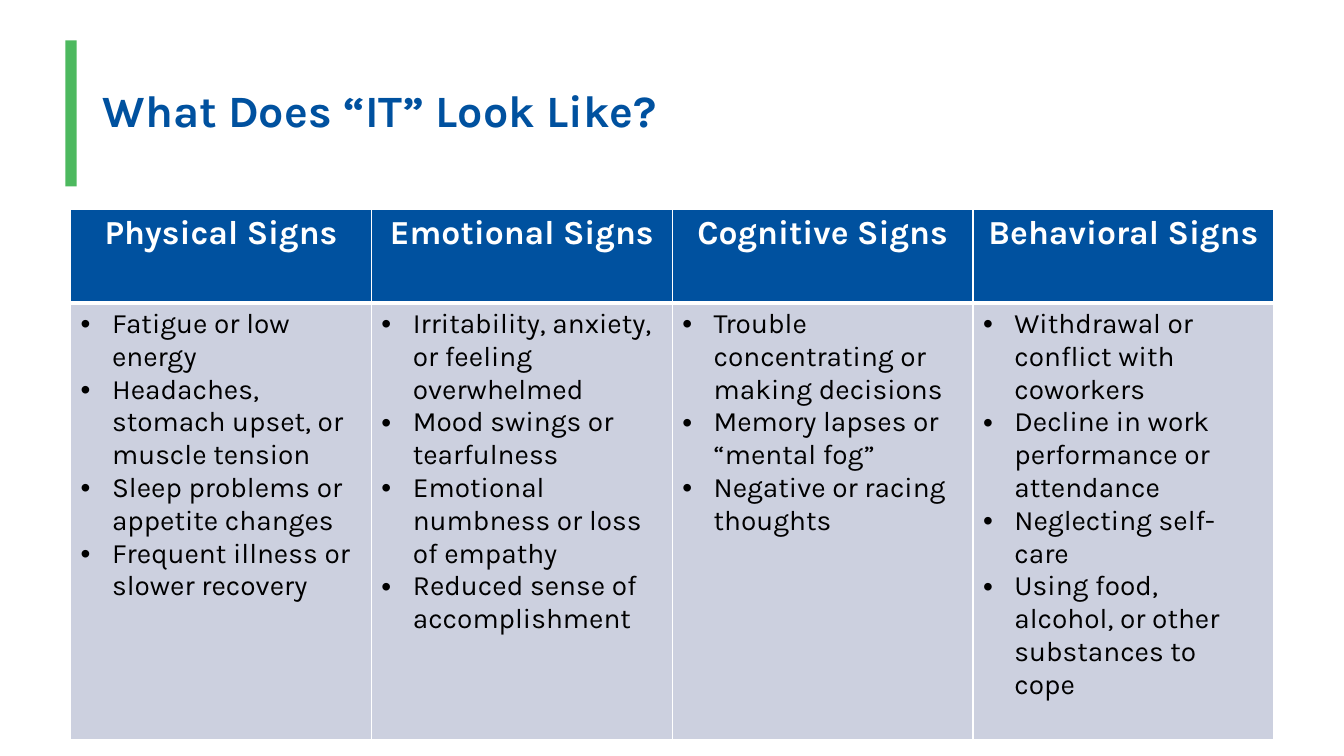
from dataclasses import dataclass

from lxml.etree import SubElement
from pptx import Presentation
from pptx.dml.color import RGBColor
from pptx.enum.shapes import MSO_SHAPE as Shape
from pptx.enum.text import MSO_ANCHOR as Anchor, PP_ALIGN as Align
from pptx.oxml.ns import qn
from pptx.util import Cm, Pt

BLUE = RGBColor(0x00, 0x51, 0x9F)
GREEN = RGBColor(0x4D, 0xB9, 0x5F)
PALE = RGBColor(0xCC, 0xD0, 0xDF)
BLACK = RGBColor(0, 0, 0)
WHITE = RGBColor(0xFF, 0xFF, 0xFF)
FONT = "Karla"
WIDE, HEAD, BODY = Cm(7.58), Cm(2.36), Cm(11)


@dataclass
class Group:
    title: str
    signs: list[str]


GROUPS = [
    Group("Physical Signs", [
        "Fatigue or low energy",
        "Headaches, stomach upset, or muscle tension",
        "Sleep problems or appetite changes",
        "Frequent illness or slower recovery",
    ]),
    Group("Emotional Signs", [
        "Irritability, anxiety, or feeling overwhelmed",
        "Mood swings or tearfulness",
        "Emotional numbness or loss of empathy",
        "Reduced sense of accomplishment",
    ]),
    Group("Cognitive Signs", [
        "Trouble concentrating or making decisions",
        "Memory lapses or “mental fog”",
        "Negative or racing thoughts",
    ]),
    Group("Behavioral Signs", [
        "Withdrawal or conflict with coworkers",
        "Decline in work performance or attendance",
        "Neglecting self-care",
        "Using food, alcohol, or other substances to cope",
    ]),
]


def write(frame, lines: list[str], *, size: float, color: RGBColor,
          bold: bool = False, align=Align.LEFT, space: float = 1,
          bullet: bool = False) -> None:
    for num, line in enumerate(lines):
        para = frame.add_paragraph() if num else frame.paragraphs[0]
        para.alignment = align
        para.line_spacing = space
        if bullet:
            props = para._p.get_or_add_pPr()
            props.set("marL", str(Cm(0.79)))
            props.set("indent", str(-Cm(0.79)))
            SubElement(props, qn("a:buFont")).set("typeface", "Arial")
            SubElement(props, qn("a:buChar")).set("char", "•")
        run = para.add_run()
        run.text = line
        font = run.font
        font.name, font.size, font.bold = FONT, Pt(size), bold
        font.color.rgb = color


def paint(cell, fill: RGBColor, base: float) -> None:
    props = cell._tc.get_or_add_tcPr()
    for side, width in {"L": 1, "R": 1, "T": 1, "B": base}.items():
        edge = SubElement(props, qn(f"a:ln{side}"), w=str(Pt(width)))
        solid = SubElement(edge, qn("a:solidFill"))
        SubElement(solid, qn("a:srgbClr"), val=str(WHITE))
    cell.fill.solid()
    cell.fill.fore_color.rgb = fill


def add_title(slide) -> None:
    bar = slide.shapes.add_shape(
        Shape.RECTANGLE, Cm(1.65), Cm(1.02), Cm(0.28), Cm(3.68))
    bar.shadow.inherit = False
    bar.fill.solid()
    bar.fill.fore_color.rgb = GREEN
    bar.line.fill.background()
    box = slide.shapes.add_textbox(Cm(2.34), Cm(1.02), Cm(29.21), Cm(3.68))
    frame = box.text_frame
    frame.word_wrap = True
    frame.vertical_anchor = Anchor.MIDDLE
    write(frame, ["What Does “IT” Look Like?"], size=32, color=BLUE,
          bold=True, space=0.9)


def add_signs(slide) -> None:
    count = len(GROUPS)
    table = slide.shapes.add_table(
        2, count, Cm(1.78), Cm(5.27), WIDE * count, HEAD + BODY).table
    table.rows[0].height, table.rows[1].height = HEAD, BODY
    for col, group in enumerate(GROUPS):
        table.columns[col].width = WIDE
        head, body = table.cell(0, col), table.cell(1, col)
        paint(head, BLUE, 3)
        paint(body, PALE, 1)
        write(head.text_frame, [group.title], size=24, color=WHITE,
              bold=True, align=Align.CENTER)
        write(body.text_frame, group.signs, size=20, color=BLACK, bullet=True)


def main() -> None:
    deck = Presentation()
    deck.slide_width, deck.slide_height = Cm(33.87), Cm(19.05)
    slide = deck.slides.add_slide(deck.slide_layouts[6])
    add_title(slide)
    add_signs(slide)
    deck.save("out.pptx")


if __name__ == "__main__":
    main()
